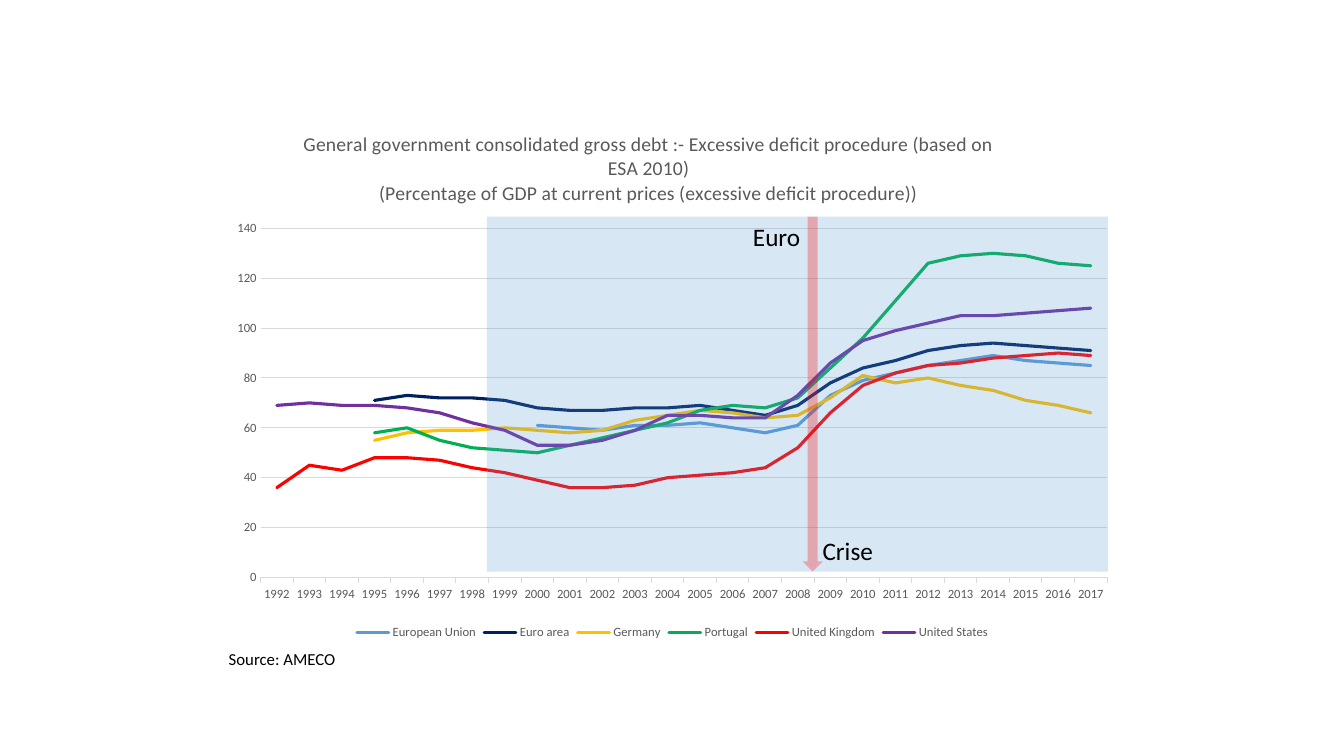
from dataclasses import dataclass

from lxml import etree
from pptx import Presentation
from pptx import util as u
from pptx.chart.data import CategoryChartData
from pptx.dml.color import RGBColor
from pptx.enum import chart as ch, shapes, text
from pptx.oxml.ns import qn


@dataclass(frozen=True)
class Theme:
    font: str = "Calibri"
    ink: str = "000000"
    gray: str = "595959"
    grid: str = "D9D9D9"
    blue: str = "5B9BD5"
    navy: str = "002060"
    gold: str = "FFC000"
    green: str = "00B050"
    red: str = "FF0000"
    plum: str = "7030A0"
    tick: float = 9
    note: float = 12
    head: float = 14
    label: float = 18
    hair: float = 0.75
    curve: float = 2.25


THEME = Theme()
YEARS = range(1992, 2018)
TITLE = [
    ("General government consolidated gross debt :- Excessive deficit procedure "
     "(based on ESA 2010)", text.PP_ALIGN.CENTER),
    ("(Percentage of GDP at current prices (excessive deficit procedure))",
     text.PP_ALIGN.LEFT),
]
# Each series ends in 2017; missing early years are padded.
DEBT = [
    ("European Union", THEME.blue,
     [61, 60, 59, 61, 61, 62, 60, 58, 61, 73, 79, 82, 85, 87, 89, 87, 86, 85]),
    ("Euro area", THEME.navy,
     [71, 73, 72, 72, 71, 68, 67, 67, 68, 68, 69, 67, 65, 69, 78, 84, 87, 91,
      93, 94, 93, 92, 91]),
    ("Germany", THEME.gold,
     [55, 58, 59, 59, 60, 59, 58, 59, 63, 65, 67, 66, 64, 65, 72, 81, 78, 80,
      77, 75, 71, 69, 66]),
    ("Portugal", THEME.green,
     [58, 60, 55, 52, 51, 50, 53, 56, 59, 62, 67, 69, 68, 72, 84, 96, 111, 126,
      129, 130, 129, 126, 125]),
    ("United Kingdom", THEME.red,
     [36, 45, 43, 48, 48, 47, 44, 42, 39, 36, 36, 37, 40, 41, 42, 44, 52, 66,
      77, 82, 85, 86, 88, 89, 90, 89]),
    ("United States", THEME.plum,
     [69, 70, 69, 69, 68, 66, 62, 59, 53, 53, 55, 59, 65, 65, 64, 64, 73, 86,
      95, 99, 102, 105, 105, 106, 107, 108]),
]


def apply(item, form):
    for name, value in form.items():
        setattr(item, name, value)


def place(node, index, form):
    """Give a chart part a manual layout, in fractions of the chart."""
    for old in node.findall(qn("c:layout")):
        node.remove(old)
    layout = etree.Element(qn("c:layout"))
    manual = etree.SubElement(layout, qn("c:manualLayout"))
    for name, value in form.items():
        etree.SubElement(manual, qn("c:" + name)).set("val", str(value))
    node.insert(index, layout)


class Board:
    def __init__(self, slide, theme):
        self.slide, self.theme = slide, theme

    def style(self, font, size, color):
        apply(font, {"name": self.theme.font, "size": u.Pt(size), "bold": False})
        font.color.rgb = RGBColor.from_string(color)

    def stroke(self, line, color, width):
        line.color.rgb = RGBColor.from_string(color)
        line.width = u.Pt(width)

    def label(self, words, box, size):
        frame = self.slide.shapes.add_textbox(*map(u.Inches, box)).text_frame
        apply(frame, {"word_wrap": False,
                      "auto_size": text.MSO_AUTO_SIZE.SHAPE_TO_FIT_TEXT})
        run = frame.paragraphs[0].add_run()
        run.text = words
        self.style(run.font, size, self.theme.ink)

    def tint(self, kind, box, color, alpha):
        """Add a see-through shape; alpha is its opacity in percent."""
        shape = self.slide.shapes.add_shape(kind, *map(u.Inches, box))
        shape.shadow.inherit = False
        shape.line.fill.background()
        shape.fill.solid()
        shape.fill.fore_color.rgb = RGBColor.from_string(color)
        tone = shape.fill._xPr.find(".//" + qn("a:srgbClr"))
        etree.SubElement(tone, qn("a:alpha")).set("val", str(alpha * 1000))

    def chart(self, box):
        t = self.theme
        data = CategoryChartData(number_format="0")
        data.categories = [str(year) for year in YEARS]
        for name, _, vals in DEBT:
            data.add_series(name, [None] * (len(YEARS) - len(vals)) + vals)
        chart = self.slide.shapes.add_chart(
            ch.XL_CHART_TYPE.LINE, *map(u.Inches, box), data).chart
        self.style(chart.font, t.tick, t.gray)
        for line, (_, color, _) in zip(chart.plots[0].series, DEBT):
            line.smooth = False
            line.marker.style = ch.XL_MARKER_STYLE.NONE
            self.stroke(line.format.line, color, t.curve)
            line.format.line._ln.set("cap", "rnd")
        chart.plots[0].vary_by_categories = False
        self.axes(chart)
        self.title(chart)
        chart.has_legend = True
        apply(chart.legend, {"position": ch.XL_LEGEND_POSITION.BOTTOM,
                             "include_in_layout": False})
        self.style(chart.legend.font, t.tick, t.gray)
        area = chart._chartSpace.find(".//" + qn("c:plotArea"))
        place(area, 0, {"layoutTarget": "inner", "xMode": "edge", "yMode": "edge",
                        "x": 0.046, "y": 0.219, "w": 0.933, "h": 0.656})

    def axes(self, chart):
        t = self.theme
        years, share = chart.category_axis, chart.value_axis
        apply(years, {"major_tick_mark": ch.XL_TICK_MARK.OUTSIDE,
                      "minor_tick_mark": ch.XL_TICK_MARK.NONE})
        apply(share, {"major_tick_mark": ch.XL_TICK_MARK.NONE,
                      "minor_tick_mark": ch.XL_TICK_MARK.NONE,
                      "minimum_scale": 0, "maximum_scale": 140,
                      "major_unit": 20, "has_major_gridlines": True})
        for axis in (years, share):
            self.style(axis.tick_labels.font, t.tick, t.gray)
        self.stroke(years.format.line, t.grid, t.hair)
        self.stroke(share.major_gridlines.format.line, t.grid, t.hair)
        share.format.line.fill.background()

    def title(self, chart):
        frame = chart.chart_title.text_frame
        for i, (words, align) in enumerate(TITLE):
            para = frame.add_paragraph() if i else frame.paragraphs[0]
            para.alignment = align
            run = para.add_run()
            run.text = words
            for font in (para.font, run.font):
                self.style(font, self.theme.head, self.theme.gray)
        chart.chart_title.include_in_layout = False
        place(chart._chartSpace.find(".//" + qn("c:title")), 1,
              {"xMode": "edge", "yMode": "edge", "x": 0.09, "y": 0.03})


def main():
    deck = Presentation()
    apply(deck, {"slide_width": u.Inches(13.33), "slide_height": u.Inches(7.5)})
    board = Board(deck.slides.add_slide(deck.slide_layouts[6]), THEME)
    kind = shapes.MSO_SHAPE
    top, tall = 2.15, 3.52
    board.chart((2.17, 1.11, 9, 5.28))
    board.tint(kind.RECTANGLE, (4.83, top, 6.16, tall), THEME.blue, 24)
    board.tint(kind.DOWN_ARROW, (7.96, top, 0.2, tall), THEME.red, 28)
    board.label("Euro", (7.37, top, 0.67, 0.4), THEME.label)
    board.label("Crise", (8.06, 5.26, 0.71, 0.4), THEME.label)
    board.label("Source: AMECO", (2.17, 6.39, 1.27, 0.3), THEME.note)
    deck.save("out.pptx")


if __name__ == "__main__":
    main()
